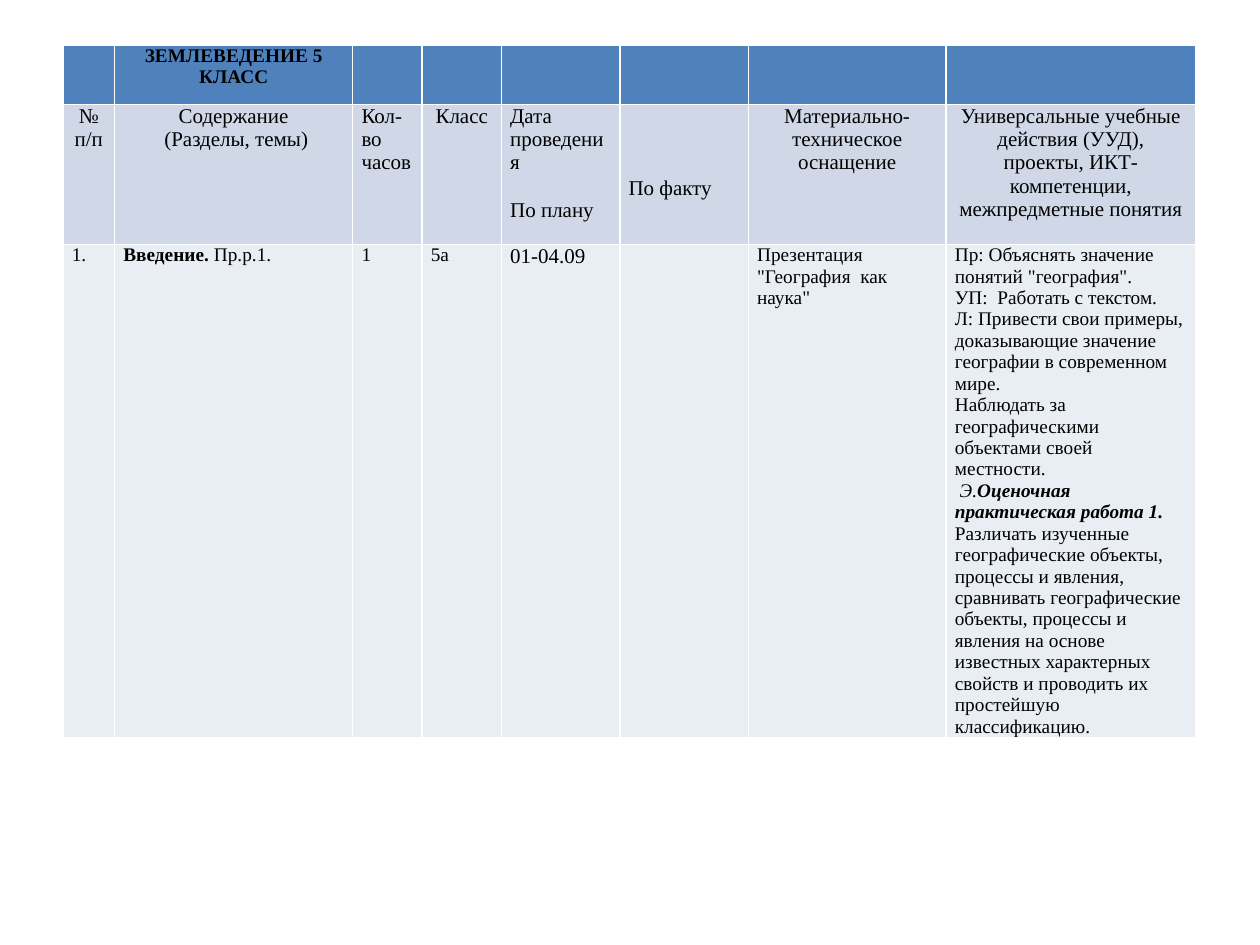
import pptx
import pptx.util
import pptx.dml.color
import pptx.enum.text

Inches = pptx.util.Inches
Align = pptx.enum.text.PP_ALIGN

THEME = {
    "font": "Times New Roman",
    "text": "000000",
    "rows": ["4F81BD", "D0D8E8", "E9EDF4"],
    "small": 11,
    "large": 12,
}

# Content: a cell is a list of paragraphs, a paragraph a list of (text, style) spans
TITLE = "ЗЕМЛЕВЕДЕНИЕ 5 КЛАСС"
HEADINGS = [
    ["№ п/п"],
    ["Содержание", " (Разделы, темы)"],
    ["Кол-во", "часов"],
    ["Класс"],
    ["Дата проведения", "По плану"],
    ["По факту"],
    ["Материально- техническое оснащение"],
    ["Универсальные учебные действия (УУД), проекты, ИКТ-компетенции, "
     "межпредметные понятия"],
]
CENTERED = {0, 1, 3, 6, 7}
LESSON = [
    [[("1.", "")]],
    [[("Введение.", "b"), (" Пр.р.1.", "")]],
    [[("1", "")]],
    [[("5а", "")]],
    [[("01-04.09", "")]],
    [],
    [[('Презентация "География  как наука"', "")]],
    [
        [('Пр: Объяснять значение понятий "география".', "")],
        [("УП:  Работать с текстом.", "")],
        [("Л: Привести свои примеры, доказывающие значение географии "
          "в современном мире.", "")],
        [("Наблюдать за географическими объектами своей местности.", "")],
        [(" ", "bi"), ("Э.", "i"), ("Оценочная практическая работа 1.", "bi"),
         (" Различать изученные географические объекты, процессы и явления, "
          "сравнивать географические объекты, процессы и явления на основе "
          "известных характерных свойств и проводить их простейшую "
          "классификацию.", "")],
    ],
]
COLUMN_WIDTHS = [0.41, 1.89, 0.55, 0.63, 0.94, 1.02, 1.57, 1.98]
ROW_HEIGHTS = [0.47, 1.11, 3.9]
DATE, FACT = 4, 5
LINE = 0.19  # height of one heading line


def write(cell, paragraphs, size, align=Align.LEFT, side=0.07, top=0, gap=0):
    """Fill a cell with styled paragraphs; gap is the space between them."""
    cell.margin_left = cell.margin_right = Inches(side)
    cell.margin_top, cell.margin_bottom = Inches(top), 0
    frame = cell.text_frame
    for number, spans in enumerate(paragraphs):
        para = frame.add_paragraph() if number else frame.paragraphs[0]
        para.alignment = align
        if number and gap:
            para.space_before = Inches(gap)
        for text, style in spans:
            span = para.add_run()
            span.text = text
            font = span.font
            font.name, font.size = THEME["font"], pptx.util.Pt(size)
            font.bold, font.italic = "b" in style, "i" in style
            font.color.rgb = pptx.dml.color.RGBColor.from_string(THEME["text"])


deck = pptx.Presentation()
deck.slide_width, deck.slide_height = Inches(10), Inches(7.5)
page = deck.slides.add_slide(deck.slide_layouts[6])

# Table grid; its default style draws the white rules
table = page.shapes.add_table(
    len(ROW_HEIGHTS), len(COLUMN_WIDTHS), Inches(0.5), Inches(0.36),
    Inches(sum(COLUMN_WIDTHS)), Inches(sum(ROW_HEIGHTS))).table
for column, width in zip(table.columns, COLUMN_WIDTHS):
    column.width = Inches(width)
for row, height, color in zip(table.rows, ROW_HEIGHTS, THEME["rows"]):
    row.height = Inches(height)
    for cell in row.cells:
        cell.fill.solid()
        cell.fill.fore_color.rgb = pptx.dml.color.RGBColor.from_string(color)

# Title, headings and lesson
write(table.cell(0, 1), [[(TITLE, "b")]], THEME["small"], Align.CENTER, side=0.12)
for index, lines in enumerate(HEADINGS):
    write(table.cell(1, index), [[(line, "")] for line in lines], THEME["large"],
          Align.CENTER if index in CENTERED else Align.LEFT,
          top=3 * LINE if index == FACT else 0,
          gap=LINE if index == DATE else 0)
for index, paragraphs in enumerate(LESSON):
    if paragraphs:
        write(table.cell(2, index), paragraphs,
              THEME["large"] if index == DATE else THEME["small"])

deck.save("out.pptx")
